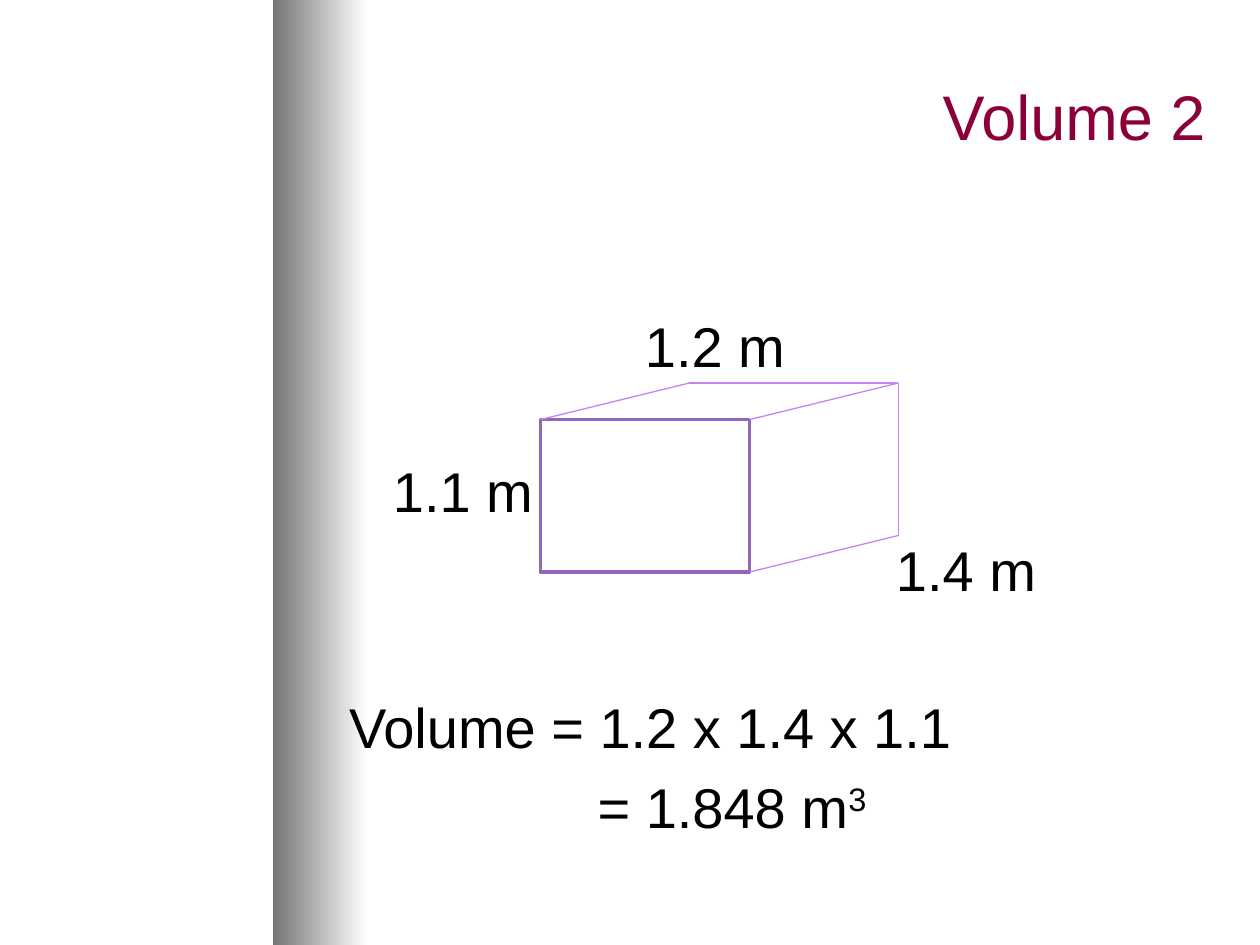
from dataclasses import dataclass

from pptx import Presentation
from pptx.dml.color import RGBColor
from pptx.enum.shapes import MSO_CONNECTOR as Connector, MSO_SHAPE as Shape
from pptx.enum.text import MSO_ANCHOR as Anchor, PP_ALIGN as Align
from pptx.oxml.ns import qn
from pptx.util import Pt
from lxml.etree import SubElement


@dataclass(frozen=True)
class Theme:
    """Colours, font and type sizes of the slide."""
    font: str = "Arial"
    title_size: int = 36
    body_size: int = 32
    title: str = "8C0039"
    text: str = "000000"
    front: str = "9267B8"
    edge: str = "C185F6"
    band_dark: str = "757575"
    band_light: str = "FFFFFF"


THEME = Theme()


def rgb(colour):
    """Return a colour object for a hex string."""
    return RGBColor.from_string(colour)


def style(paragraph, size, colour):
    """Set font, size and colour of a paragraph."""
    font = paragraph.font
    font.name, font.size = THEME.font, Pt(size)
    font.color.rgb = rgb(colour)


def add_band(slide, left, width, height):
    """Add the vertical gradient band."""
    band = slide.shapes.add_shape(Shape.RECTANGLE, Pt(left), 0, Pt(width), Pt(height))
    band.shadow.inherit = False
    band.line.fill.background()
    band.fill.gradient()
    band.fill.gradient_angle = 0
    stops = band.fill.gradient_stops
    for stop, position, colour in zip(stops, (0, 1), (THEME.band_dark, THEME.band_light)):
        stop.position = position
        stop.color.rgb = rgb(colour)


def set_title(slide, text):
    """Place and format the title placeholder."""
    title = slide.shapes.title
    title.left, title.top, title.width, title.height = Pt(192), Pt(18), Pt(504), Pt(96)
    title.text_frame.text = text
    title.text_frame.vertical_anchor = Anchor.MIDDLE
    paragraph = title.text_frame.paragraphs[0]
    paragraph.alignment = Align.RIGHT
    style(paragraph, THEME.title_size, THEME.title)


def add_text(slide, left, top, width, height, text):
    """Add a text box without insets and return its text frame."""
    frame = slide.shapes.add_textbox(Pt(left), Pt(top), Pt(width), Pt(height)).text_frame
    frame.margin_left = frame.margin_right = frame.margin_top = frame.margin_bottom = 0
    frame.word_wrap = True
    frame.text = text
    style(frame.paragraphs[0], THEME.body_size, THEME.text)
    return frame


def add_working(slide):
    """Add the two-line volume calculation."""
    frame = add_text(slide, 199.5, 395.5, 440, 84, "Volume = 1.2 x 1.4 x 1.1")
    result = frame.add_paragraph()
    result._p.get_or_add_pPr().set("marL", str(Pt(142)))
    result.space_before = Pt(7.5)
    style(result, THEME.body_size, THEME.text)
    result.add_run().text = "= 1.848 m"
    power = result.add_run()
    power.text = "3"
    power._r.get_or_add_rPr().set("baseline", "30000")


def add_edge(slide, start, end):
    """Add one thin edge of the cuboid."""
    points = [Pt(value) for value in (*start, *end)]
    edge = slide.shapes.add_connector(Connector.STRAIGHT, *points)
    edge.line.color.rgb = rgb(THEME.edge)
    edge.line.width = Pt(0.75)
    SubElement(edge._element.spPr, qn("a:effectLst"))


def add_cuboid(slide, left, top, width, height, depth_x, depth_y):
    """Add the front face and the receding edges of the cuboid."""
    front = slide.shapes.add_shape(Shape.RECTANGLE, Pt(left), Pt(top), Pt(width), Pt(height))
    front.shadow.inherit = False
    front.fill.background()
    front.line.color.rgb = rgb(THEME.front)
    front.line.width = Pt(2)
    corners = [(left, top), (left + width, top), (left + width, top + height)]
    back = [(x + depth_x, y - depth_y) for x, y in corners]
    for start, end in [*zip(corners, back), *zip(back, back[1:])]:
        add_edge(slide, start, end)


def main():
    """Build and save the slide."""
    presentation = Presentation()
    presentation.slide_width, presentation.slide_height = Pt(720), Pt(540)
    slide = presentation.slides.add_slide(presentation.slide_layouts[5])
    add_band(slide, 156, 54, 540)
    set_title(slide, "Volume 2")
    for left, top, text in ((368.5, 178, "1.2 m"), (224.5, 261, "1.1 m"), (512, 306, "1.4 m")):
        add_text(slide, left, top, 90, 37, text)
    add_working(slide)
    add_cuboid(slide, 308.88, 239.76, 119.5, 87.12, 85, 20.88)
    presentation.save("out.pptx")


if __name__ == "__main__":
    main()
